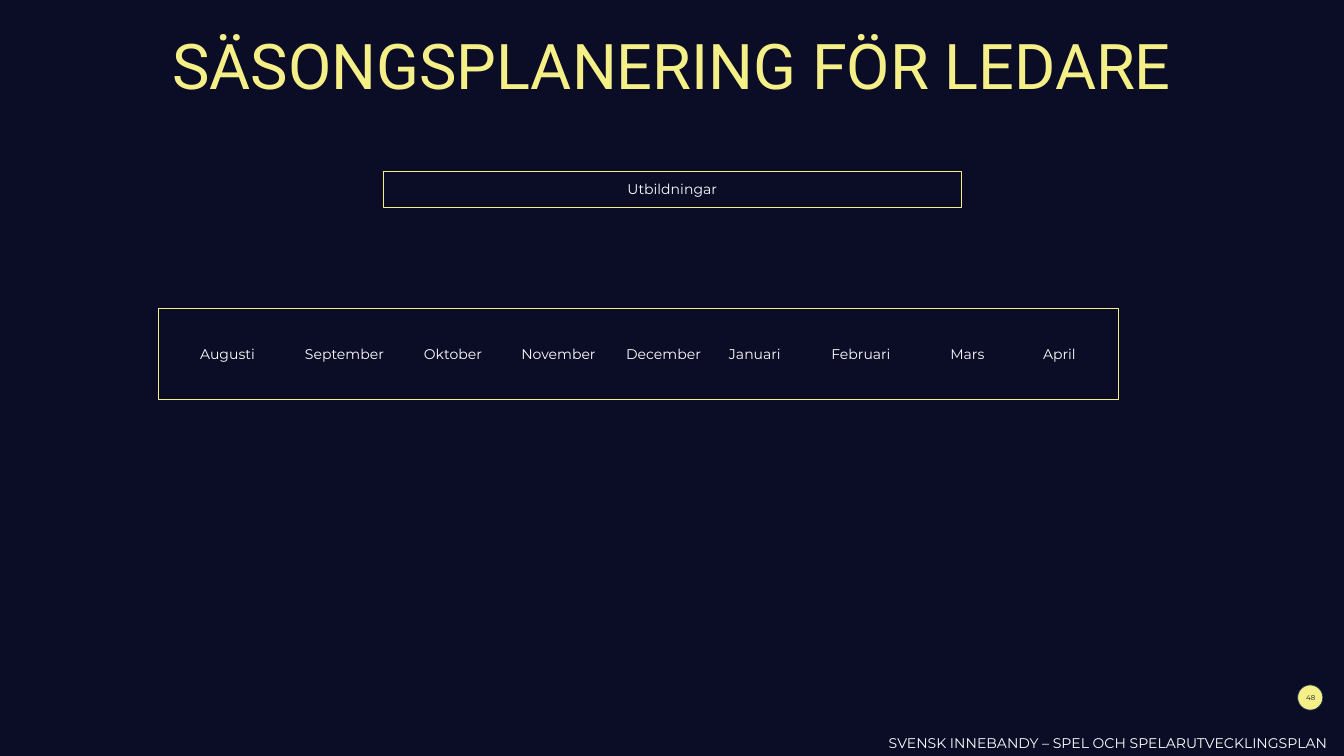
from dataclasses import dataclass

from lxml.etree import SubElement
from pptx import Presentation
from pptx.dml.color import RGBColor
from pptx.enum.shapes import MSO_SHAPE
from pptx.enum.text import MSO_ANCHOR, PP_ALIGN
from pptx.oxml.ns import qn
from pptx.util import Inches, Pt


@dataclass(frozen=True)
class Theme:
    night: RGBColor = RGBColor(0x0B, 0x0C, 0x26)
    yellow: RGBColor = RGBColor(0xF5, 0xEF, 0x88)
    navy: RGBColor = RGBColor(0x1E, 0x32, 0x56)
    white: RGBColor = RGBColor(0xFF, 0xFF, 0xFF)
    title_font: str = "Roboto"
    body_font: str = "Montserrat"
    title_size: int = 90
    body_size: int = 20
    number_size: int = 10


class SlideBuilder:
    def __init__(self, page, theme):
        self.page = page
        self.theme = theme
        page.background.fill.solid()
        page.background.fill.fore_color.rgb = theme.night

    def set_text(self, shape, text, size, color, font=None, align=PP_ALIGN.CENTER):
        frame = shape.text_frame
        frame.word_wrap = True
        frame.vertical_anchor = MSO_ANCHOR.MIDDLE
        para = frame.paragraphs[0]
        para.text = text
        para.alignment = align
        para.font.name = font or self.theme.body_font
        para.font.size = Pt(size)
        para.font.color.rgb = color
        return para

    def title(self, text, area):
        title = self.page.shapes.title
        title.left, title.top, title.width, title.height = map(Inches, area)
        theme = self.theme
        para = self.set_text(title, text, theme.title_size, theme.yellow, theme.title_font)
        para.line_spacing = 0.9

    def frame(self, area):
        box = self.page.shapes.add_shape(MSO_SHAPE.RECTANGLE, *map(Inches, area))
        box.shadow.inherit = False
        box.fill.background()
        box.line.color.rgb = self.theme.yellow
        box.line.width = Pt(0.5)
        return box

    def label_box(self, text, area):
        self.set_text(self.frame(area), text, self.theme.body_size, self.theme.white)

    def timeline(self, labels, stops, area, inset):
        box = self.frame(area)
        box.text_frame.margin_left = Inches(inset)
        properties = box.text_frame.paragraphs[0]._p.get_or_add_pPr()
        tabs = SubElement(properties, qn("a:tabLst"))
        for stop in stops:
            SubElement(tabs, qn("a:tab"), pos=str(Inches(stop)), algn="l")
        theme = self.theme
        self.set_text(box, "\t".join(labels), theme.body_size, theme.white, align=PP_ALIGN.LEFT)

    def badge(self, area):
        circle = self.page.shapes.add_shape(MSO_SHAPE.OVAL, *map(Inches, area))
        circle.shadow.inherit = False
        circle.fill.solid()
        circle.fill.fore_color.rgb = self.theme.yellow
        circle.line.color.rgb = self.theme.navy
        circle.line.width = Pt(1)

    def text(self, text, area, size, color, align):
        box = self.page.shapes.add_textbox(*map(Inches, area))
        self.set_text(box, text, size, color, align=align)


def main():
    deck = Presentation()
    deck.slide_width = Inches(26.66)
    deck.slide_height = Inches(15)
    theme = Theme()
    slide = SlideBuilder(deck.slides.add_slide(deck.slide_layouts[5]), theme)

    months = ["Augusti", "September", "Oktober", "November", "December",
              "Januari", "Februari", "Mars", "April"]
    month_stops = [2.08, 4.44, 6.37, 8.45, 10.49, 12.52, 14.88, 16.72]

    slide.title("SÄSONGSPLANERING FÖR LEDARE", (1.83, 0.62, 23, 1.49))
    slide.label_box("Utbildningar", (7.6, 3.4, 11.47, 0.71))
    slide.timeline(months, month_stops, (3.13, 6.11, 19.06, 1.82), 0.84)
    slide.badge((25.74, 13.59, 0.5, 0.5))
    slide.text("48", (25.2, 13.45, 1.6, 0.8), theme.number_size, theme.night, PP_ALIGN.CENTER)
    slide.text("SVENSK INNEBANDY – SPEL OCH SPELARUTVECKLINGSPLAN",
               (17.53, 14.52, 9.49, 0.45), theme.body_size, theme.white, PP_ALIGN.LEFT)
    deck.save("out.pptx")


if __name__ == "__main__":
    main()
